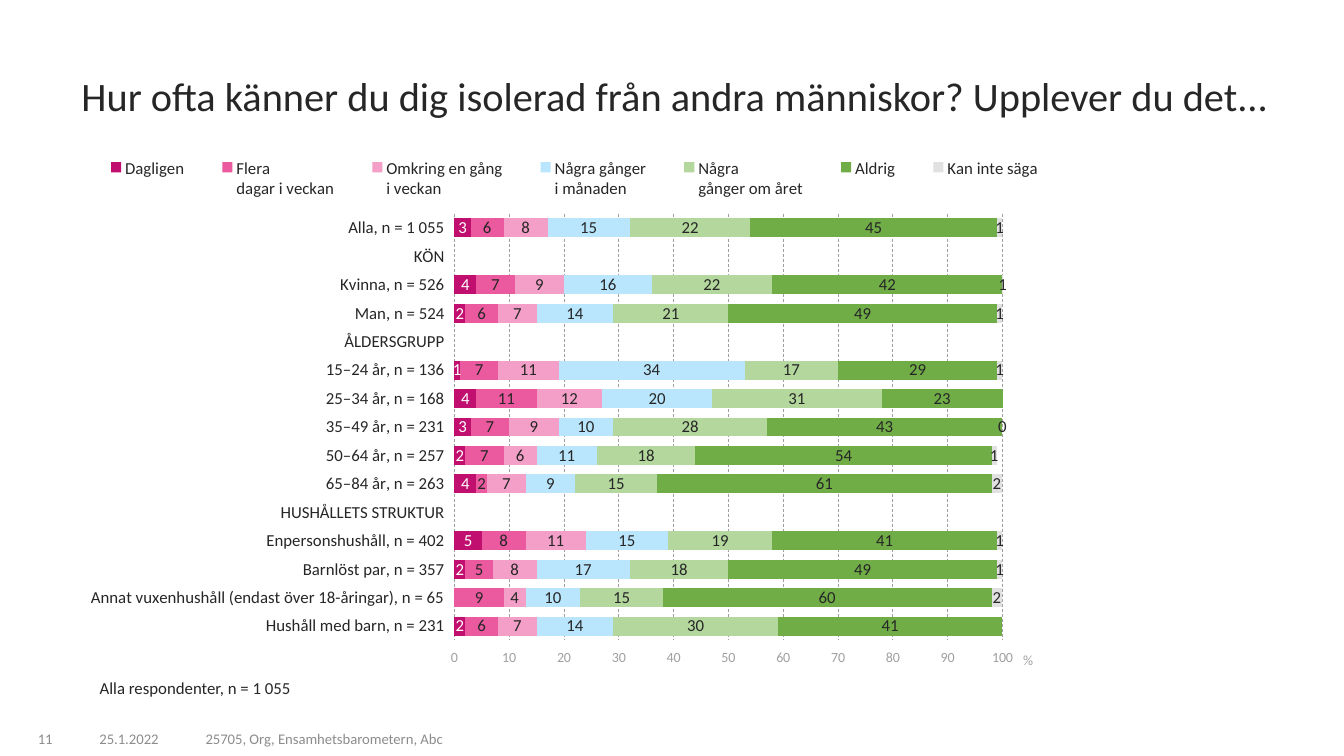
from pptx import Presentation
from pptx import util as u
from pptx.chart.data import CategoryChartData
from pptx.dml.color import RGBColor
from pptx.enum import chart as charts, dml, text
from pptx.oxml import parse_xml
from pptx.oxml.ns import nsdecls

FONT = "Calibri"
DARK, AXIS_GREY, FOOTER_GREY = "262626", "A0A0A0", "8C8C8C"

SERIES = [
    ("Dagligen", "C10F70", "FFFFFF"),
    ("Flera\ndagar i veckan", "EB599E", DARK),
    ("Omkring en gång\ni veckan", "F39FC7", DARK),
    ("Några gånger\ni månaden", "B9E6FD", DARK),
    ("Några\ngånger om året", "B3D79D", DARK),
    ("Aldrig\n", "70AD47", DARK),
    ("Kan inte säga", "E1E1E1", DARK),
]
HEADING = [None] * len(SERIES)
ANSWERS = {
    "Alla, n = 1 055": [3, 6, 8, 15, 22, 45, 1],
    "KÖN": HEADING,
    "Kvinna, n = 526": [4, 7, 9, 16, 22, 42, 1],
    "Man, n = 524": [2, 6, 7, 14, 21, 49, 1],
    "ÅLDERSGRUPP": HEADING,
    "15–24 år, n = 136": [1, 7, 11, 34, 17, 29, 1],
    "25–34 år, n = 168": [4, 11, 12, 20, 31, 23, None],
    "35–49 år, n = 231": [3, 7, 9, 10, 28, 43, 0],
    "50–64 år, n = 257": [2, 7, 6, 11, 18, 54, 1],
    "65–84 år, n = 263": [4, 2, 7, 9, 15, 61, 2],
    "HUSHÅLLETS STRUKTUR": HEADING,
    "Enpersonshushåll, n = 402": [5, 8, 11, 15, 19, 41, 1],
    "Barnlöst par, n = 357": [2, 5, 8, 17, 18, 49, 1],
    "Annat vuxenhushåll (endast över 18-åringar), n = 65": [None, 9, 4, 10, 15, 60, 2],
    "Hushåll med barn, n = 231": [2, 6, 7, 14, 30, 41, None],
}


def color(value):
    """Turn a hex string into a colour."""
    return RGBColor.from_string(value)


def set_font(font, size, fill):
    """Give a font its name, size and colour."""
    font.name, font.size, font.bold = FONT, u.Pt(size), False
    font.color.rgb = color(fill)


def add_text(page, words, left, top, width, height, size=10.5, fill=FOOTER_GREY,
             anchor=text.MSO_ANCHOR.BOTTOM, align=text.PP_ALIGN.LEFT, spacing=1.0):
    """Add a one-paragraph text box."""
    box = page.shapes.add_textbox(*map(u.Inches, (left, top, width, height)))
    frame = box.text_frame
    frame.word_wrap = True
    frame.vertical_anchor = anchor
    para = frame.paragraphs[0]
    para.alignment, para.line_spacing = align, spacing
    span = para.add_run()
    span.text = words
    set_font(span.font, size, fill)


def manual_layout(target="", **places):
    """Build a manual chart layout from fractions of the chart area."""
    modes = "".join(f'<c:{side}Mode val="edge"/>' for side in "xy")
    values = "".join(f'<c:{name} val="{value}"/>' for name, value in places.items())
    return parse_xml(f'<c:layout {nsdecls("c")}><c:manualLayout>{target}{modes}{values}'
                     '</c:manualLayout></c:layout>')


def replace_layout(parent, layout, index):
    """Put a layout into a chart element in place of its present one."""
    for old in parent.findall(layout.tag):
        parent.remove(old)
    parent.insert(index, layout)


def format_axes(chart):
    """Style both axes, the gridlines and the percent title."""
    rows, scale = chart.category_axis, chart.value_axis
    for axis, size, fill in ((rows, 12, DARK), (scale, 10, AXIS_GREY)):
        axis.major_tick_mark = axis.minor_tick_mark = charts.XL_TICK_MARK.NONE
        axis.format.line.fill.background()
        set_font(axis.tick_labels.font, size, fill)
    rows.reverse_order = True
    rows.tick_label_position = charts.XL_TICK_LABEL_POSITION.LOW
    scale.tick_label_position = charts.XL_TICK_LABEL_POSITION.HIGH
    scale.minimum_scale, scale.maximum_scale, scale.major_unit = 0, 100.01, 10
    scale.tick_labels.number_format = "General"
    scale.tick_labels.number_format_is_linked = False
    grid = scale.major_gridlines.format.line
    grid.width, grid.dash_style = u.Pt(0.5), dml.MSO_LINE.DASH
    grid.color.rgb = color(AXIS_GREY)
    title = scale.axis_title
    span = title.text_frame.paragraphs[0].add_run()
    span.text = "%"
    set_font(span.font, 10, AXIS_GREY)
    element = title._element
    rich = element.find("{*}tx")
    replace_layout(element, manual_layout(x=0.95, y=0.95), element.index(rich) + 1)


def format_legend(chart):
    """Spread the legend over the top of the chart."""
    chart.has_legend = True
    legend = chart.legend
    legend.position = charts.XL_LEGEND_POSITION.TOP
    legend.include_in_layout = False
    set_font(legend.font, 12, DARK)
    replace_layout(legend._element, manual_layout(x=0.01, y=0.01, w=0.99, h=0.1), 1)


def add_answers(page):
    """Add the stacked bar chart of answers by group."""
    data = CategoryChartData()
    data.categories = list(ANSWERS)
    for (name, _, _), values in zip(SERIES, zip(*ANSWERS.values())):
        data.add_series(name, values)
    place = map(u.Inches, (0.68, 1.46, 9.94, 5.24))
    chart = page.shapes.add_chart(charts.XL_CHART_TYPE.BAR_STACKED, *place, data).chart
    set_font(chart.font, 12, "000000")
    chart.has_title = False
    plot = chart.plots[0]
    plot.gap_width, plot.overlap, plot.vary_by_categories = 50, 100, False
    for series, (_, fill, label_fill) in zip(plot.series, SERIES):
        series.format.fill.solid()
        series.format.fill.fore_color.rgb = color(fill)
        series.invert_if_negative = False
        labels = series.data_labels
        labels.show_value = True
        labels.number_format, labels.number_format_is_linked = "#,##0", False
        set_font(labels.font, 12, label_fill)
    format_axes(chart)
    format_legend(chart)
    area = chart._chartSpace.chart.plotArea
    inner = '<c:layoutTarget val="inner"/>'
    replace_layout(area, manual_layout(inner, x=0.385, y=0.126, w=0.547, h=0.808), 0)


def main():
    """Build the slide and save it."""
    deck = Presentation()
    deck.slide_width, deck.slide_height = u.Inches(13.33), u.Inches(7.5)
    page = deck.slides.add_slide(deck.slide_layouts[6])
    add_text(page, "Hur ofta känner du dig isolerad från andra människor? Upplever du det...",
             0.71, 0.64, 12.07, 0.68, size=28.8, fill=DARK,
             anchor=text.MSO_ANCHOR.MIDDLE, spacing=0.9)
    add_answers(page)
    add_text(page, "Alla respondenter, n = 1 055", 0.89, 6.7, 9.18, 0.28, size=12,
             fill=DARK, anchor=text.MSO_ANCHOR.TOP, spacing=0.9)
    add_text(page, "11", 0.03, 7.16, 0.59, 0.3, align=text.PP_ALIGN.RIGHT)
    add_text(page, "25.1.2022", 0.66, 7.16, 1.24, 0.3, align=text.PP_ALIGN.CENTER)
    add_text(page, "25705, Org, Ensamhetsbarometern, Abc", 1.94, 7.16, 5.92, 0.3)
    deck.save("out.pptx")


if __name__ == "__main__":
    main()
